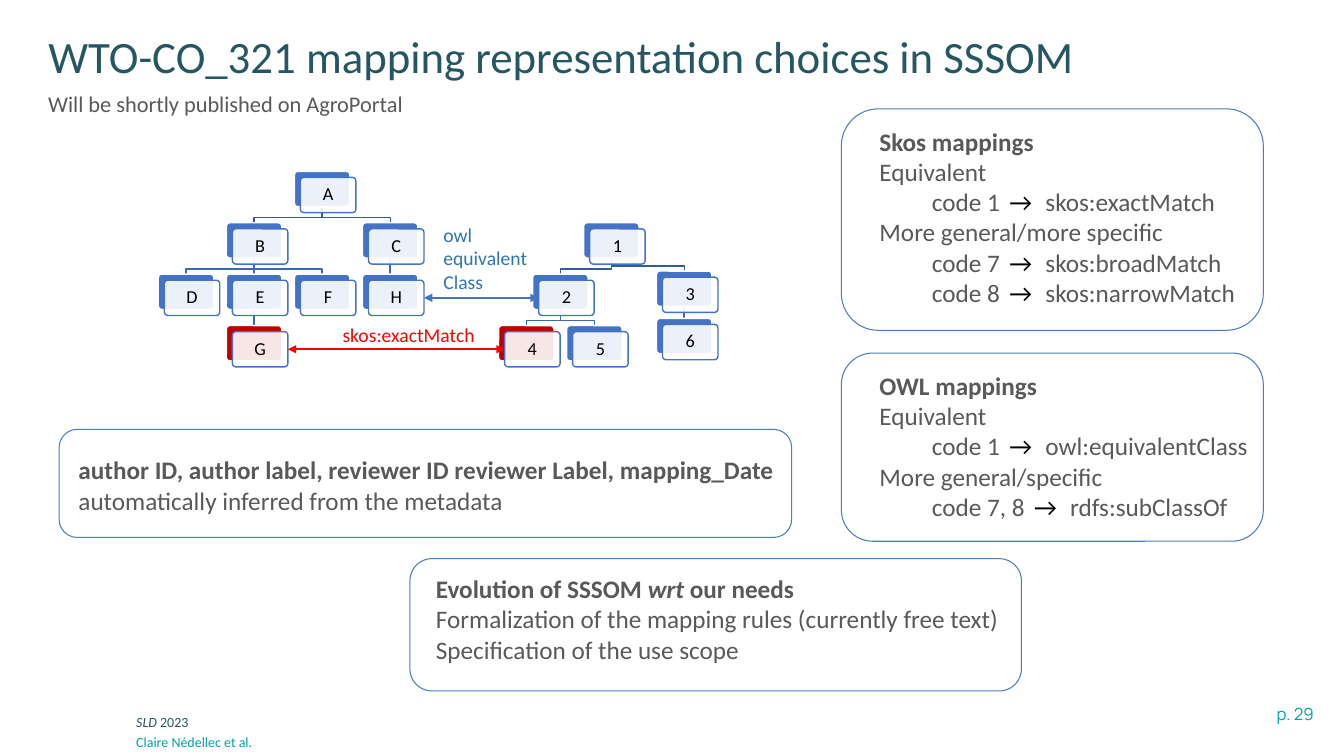
from dataclasses import dataclass
from lxml import etree
from pptx import Presentation
from pptx.dml.color import RGBColor
from pptx.enum.shapes import MSO_CONNECTOR as CONN, MSO_SHAPE as SHAPE
from pptx.enum.text import MSO_ANCHOR as ANCHOR, PP_ALIGN as ALIGN
from pptx.oxml.ns import qn
from pptx.util import Inches, Pt


@dataclass(frozen=True)
class Theme:
    font: str = "Calibri"
    page_font: str = "Manrope"
    title: str = "265661"
    footer: str = "275662"
    teal: str = "00A3A6"
    body: str = "595959"
    black: str = "000000"
    white: str = "FFFFFF"
    panel: str = "4A7EBB"
    node: str = "4472C4"
    marked: str = "C00000"
    top_link: str = "365B9D"
    link: str = "3E67B2"
    owl: str = "2E75B6"
    skos: str = "FF0000"
    title_size: int = 32
    body_size: int = 18
    subtitle_size: int = 16
    label_size: int = 14
    node_size: int = 13
    page_size: int = 12
    footer_size: int = 10


T = Theme()
W, H = 13.33, 7.5

# Boxes are left, top, width, height in percent of the slide.
TITLE = "WTO-CO_321 mapping representation choices in SSSOM"
TITLE_BOX = (2.85, 2.8, 90, 10.1)
LABELS = [  # text, box, size, colour, wrap
    ("Will be shortly published on AgroPortal", (2.85, 11.3, 28.2, 4.9), T.subtitle_size, T.body, False),
    ("owl equivalentClass", (32.25, 28.8, 8.3, 10.8), T.label_size, T.owl, True),
    ("skos:exactMatch", (24.75, 42.1, 11.5, 4.5), T.label_size, T.skos, False),
    ("Claire Nédellec et al.", (9.4, 96.4, 55.1, 3.7), T.footer_size, T.teal, True),
]
PAGE = ("p. 29", (81.4, 92.4, 17.1, 4))
EVENT = (("SLD ", "2023"), (9.4, 93.7, 55.1, 3.6))

# A panel is its outline, its text box, a heading and lines; a heading's second part is italic.
# A pair is a rule: code, target.
PANELS = [
    ((4.4, 56.8, 54.5, 14.3), (5.1, 59.5, 57.5, 9.5),
     ["author ID, author label, reviewer ID reviewer Label, mapping_Date"],
     ["automatically inferred from the metadata"]),
    ((62.6, 14.4, 31.4, 29.3), (64.7, 16, 29.3, 25.6),
     ["Skos mappings"],
     ["Equivalent", ("code 1", "skos:exactMatch"),
      "More general/more specific", ("code 7", "skos:broadMatch"), ("code 8", "skos:narrowMatch")]),
    ((62.6, 46.7, 31.4, 24.9), (64.7, 48.3, 29.8, 25.6),
     ["OWL mappings"],
     ["Equivalent", ("code 1", "owl:equivalentClass"),
      "More general/specific", ("code 7, 8", "rdfs:subClassOf")]),
    ((30.5, 73.9, 45.5, 17.5), (31.7, 75.2, 57.5, 13.5),
     ["Evolution of SSSOM ", "wrt ", "our needs"],
     ["Formalization of the mapping rules (currently free text)", "Specification of the use scope"]),
]
RULE_INDENT = 0.52
ARROW = " → "
ARROW_SPACING = 270  # hundredths of a point between characters

# Node: column, row, parent
NODES = {
    "A": (2, 0, None), "B": (1, 1, "A"), "C": (3, 1, "A"),
    "D": (0, 2, "B"), "E": (1, 2, "B"), "F": (2, 2, "B"), "H": (3, 2, "C"), "G": (1, 3, "E"),
    "1": (6.25, 1, None), "2": (5.5, 2, "1"), "3": (7.32, 1.94, "1"),
    "4": (5, 3, "2"), "5": (6, 3, "2"), "6": (7.32, 2.86, "3"),
}
MARKED = {"G", "4"}
MAPPINGS = [("G", "4", T.skos), ("H", "2", T.node)]
TREE_X, TREE_Y, COL, ROW = 1.57, 1.7, 0.675, 0.51
NODE_W, NODE_H, FRONT_SHIFT, BEND = 0.55, 0.35, 0.06, 0.05


def rgb(value):
    return RGBColor.from_string(value)


def place(box):
    left, top, width, height = box
    return [Inches(v / 100) for v in (left * W, top * H, width * W, height * H)]


def style(font, size, color, name=T.font, bold=None):
    font.size, font.name, font.bold = Pt(size), name, bold
    font.color.rgb = rgb(color)


def add_text(box, wrap=True):
    tf = slide.shapes.add_textbox(*place(box)).text_frame
    tf.word_wrap = wrap
    return tf


def add_runs(p, parts):
    """Add the parts as runs, every second one in italics, and return the runs."""
    runs = []
    for i, part in enumerate(parts):
        r = p.add_run()
        r.text = part
        if len(parts) > 1:
            r.font.italic = i % 2 == 1
        runs.append(r)
    return runs


def add_round(left, top, width, height, adj, fill, line, weight):
    sp = slide.shapes.add_shape(SHAPE.ROUNDED_RECTANGLE, left, top, width, height)
    sp.shadow.inherit = False
    sp.adjustments[0] = adj
    if fill:
        sp.fill.solid()
        sp.fill.fore_color.rgb = rgb(fill)
    else:
        sp.fill.background()
    sp.line.color.rgb, sp.line.width = rgb(line), Pt(weight)
    return sp


def add_line(start, start_side, end, end_side, color, weight):
    line = slide.shapes.add_connector(CONN.STRAIGHT, 0, 0, 0, 0)
    line.begin_connect(start, start_side)
    line.end_connect(end, end_side)
    line.line.color.rgb, line.line.width = rgb(color), Pt(weight)
    etree.SubElement(line._element.spPr, qn("a:effectLst"))
    return line


def add_panel(outline, box, heading, lines):
    tf = add_text(box)
    p = tf.paragraphs[0]
    style(p.font, T.body_size, T.body, bold=True)
    add_runs(p, heading)
    for line in lines:
        p = tf.add_paragraph()
        if isinstance(line, tuple):
            code, target = line
            pPr = p._p.get_or_add_pPr()
            pPr.set("marL", str(Inches(RULE_INDENT)))
            pPr.set("indent", "0")
            for part in (code, ARROW, target):
                r = p.add_run()
                r.text = part
                if part == ARROW:
                    r.font.color.rgb = rgb(T.black)
                    r.font._element.set("spc", str(ARROW_SPACING))
        else:
            p.text = line
        style(p.font, T.body_size, T.body)
    add_round(*place(outline), 0.167, None, T.panel, 0.75)


def add_node(name, col, row):
    """Draw a solid back card and a translucent front card with the name."""
    left, top = TREE_X + col * COL, TREE_Y + row * ROW
    size = Inches(NODE_W), Inches(NODE_H)
    back = add_round(Inches(left), Inches(top), *size, 0.1,
                     T.marked if name in MARKED else T.node, T.white, 1)
    front = add_round(Inches(left + FRONT_SHIFT), Inches(top + FRONT_SHIFT), *size,
                      0.1, T.white, T.node, 1)
    color = front._element.spPr.find(qn("a:solidFill"))[0]
    etree.SubElement(color, qn("a:alpha"), val="90000")
    tf = front.text_frame
    tf.margin_left = tf.margin_right = tf.margin_top = tf.margin_bottom = Inches(0.05)
    tf.vertical_anchor = ANCHOR.MIDDLE
    p = tf.paragraphs[0]
    p.text, p.alignment, p.line_spacing = name, ALIGN.CENTER, 0.9
    style(p.font, T.node_size, T.black)
    return back, front


def add_branch(parent, child, color):
    x1, y1 = parent.left + parent.width // 2, parent.top + parent.height
    x2, y2 = child.left + child.width // 2, child.top
    if x1 == x2:
        sp = add_line(parent, 2, child, 0, color, 1)
    else:
        bend = y2 - Inches(BEND)
        path = slide.shapes.build_freeform(x1, y1)
        path.add_line_segments([(x1, bend), (x2, bend), (x2, y2)], close=False)
        sp = path.convert_to_shape()
        sp.shadow.inherit = False
        sp.fill.background()
        sp.line.color.rgb, sp.line.width = rgb(color), Pt(1)
    slide.shapes._spTree.insert(2, sp._element)  # behind the cards


prs = Presentation()
prs.slide_width, prs.slide_height = Inches(W), Inches(H)
slide = prs.slides.add_slide(prs.slide_layouts[5])

title = slide.shapes.title
title.left, title.top, title.width, title.height = place(TITLE_BOX)
title.text_frame.vertical_anchor = ANCHOR.MIDDLE
p = title.text_frame.paragraphs[0]
p.text, p.alignment, p.line_spacing = TITLE, ALIGN.LEFT, 0.9
style(p.font, T.title_size, T.title)

for panel in PANELS:
    add_panel(*panel)

cards = {name: add_node(name, col, row) for name, (col, row, _) in NODES.items()}
for name, (_, _, parent) in NODES.items():
    if parent:
        top_level = NODES[parent][2] is None
        add_branch(cards[parent][0], cards[name][0], T.top_link if top_level else T.link)

for start, end, color in MAPPINGS:
    arrow = add_line(cards[start][1], 3, cards[end][1], 1, color, 1.5)
    ln = arrow.line._get_or_add_ln()
    for tip in ("a:headEnd", "a:tailEnd"):
        etree.SubElement(ln, qn(tip), type="triangle")

for text, box, size, color, wrap in LABELS:
    p = add_text(box, wrap).paragraphs[0]
    p.text = text
    style(p.font, size, color)

p = add_text(PAGE[1]).paragraphs[0]
p.text, p.alignment = PAGE[0], ALIGN.RIGHT
style(p.font, T.page_size, T.teal, T.page_font)

p = add_text(EVENT[1]).paragraphs[0]
style(p.font, T.footer_size, T.footer)
event, year = add_runs(p, EVENT[0])
event.font.italic, year.font.italic = True, False

prs.save("out.pptx")
